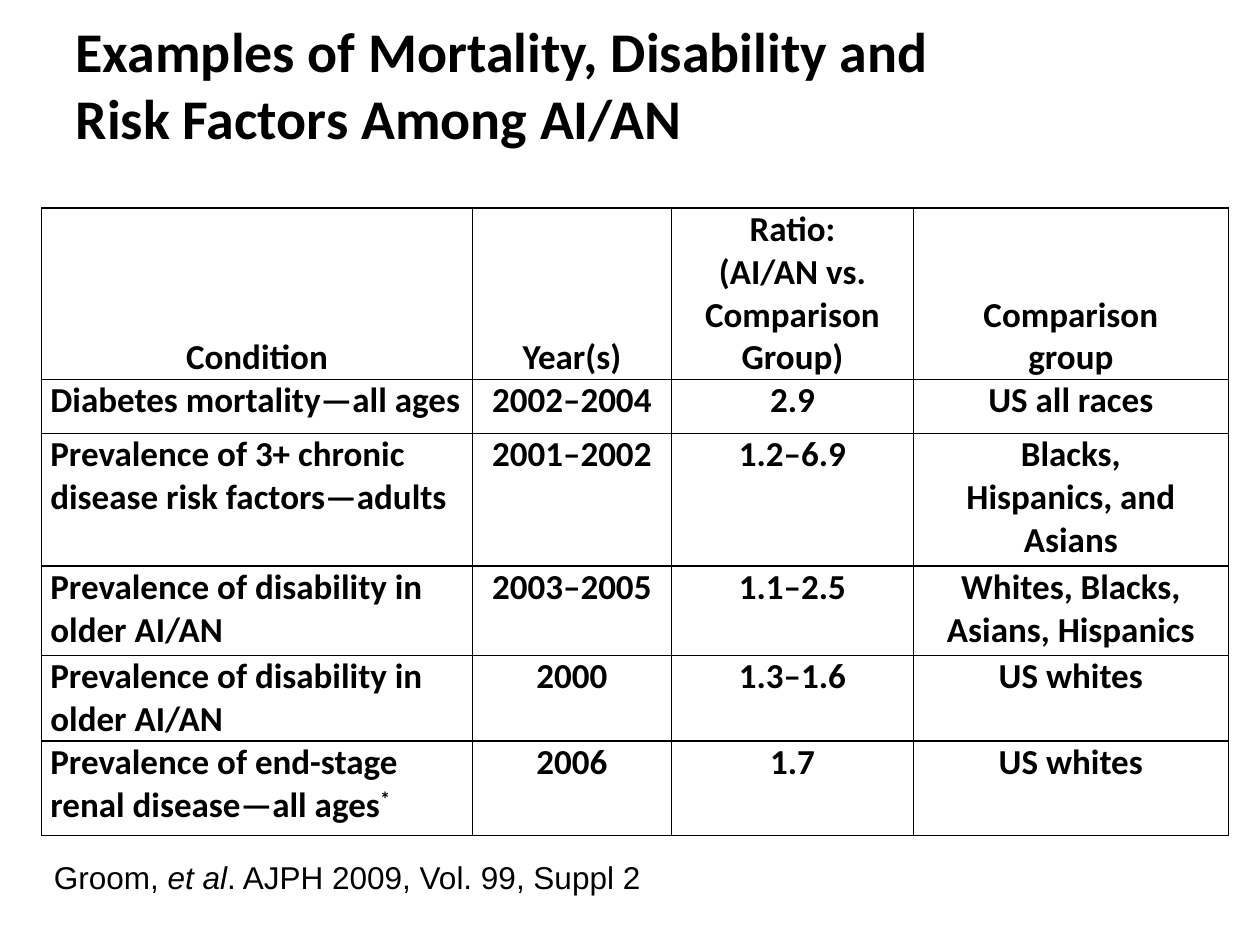
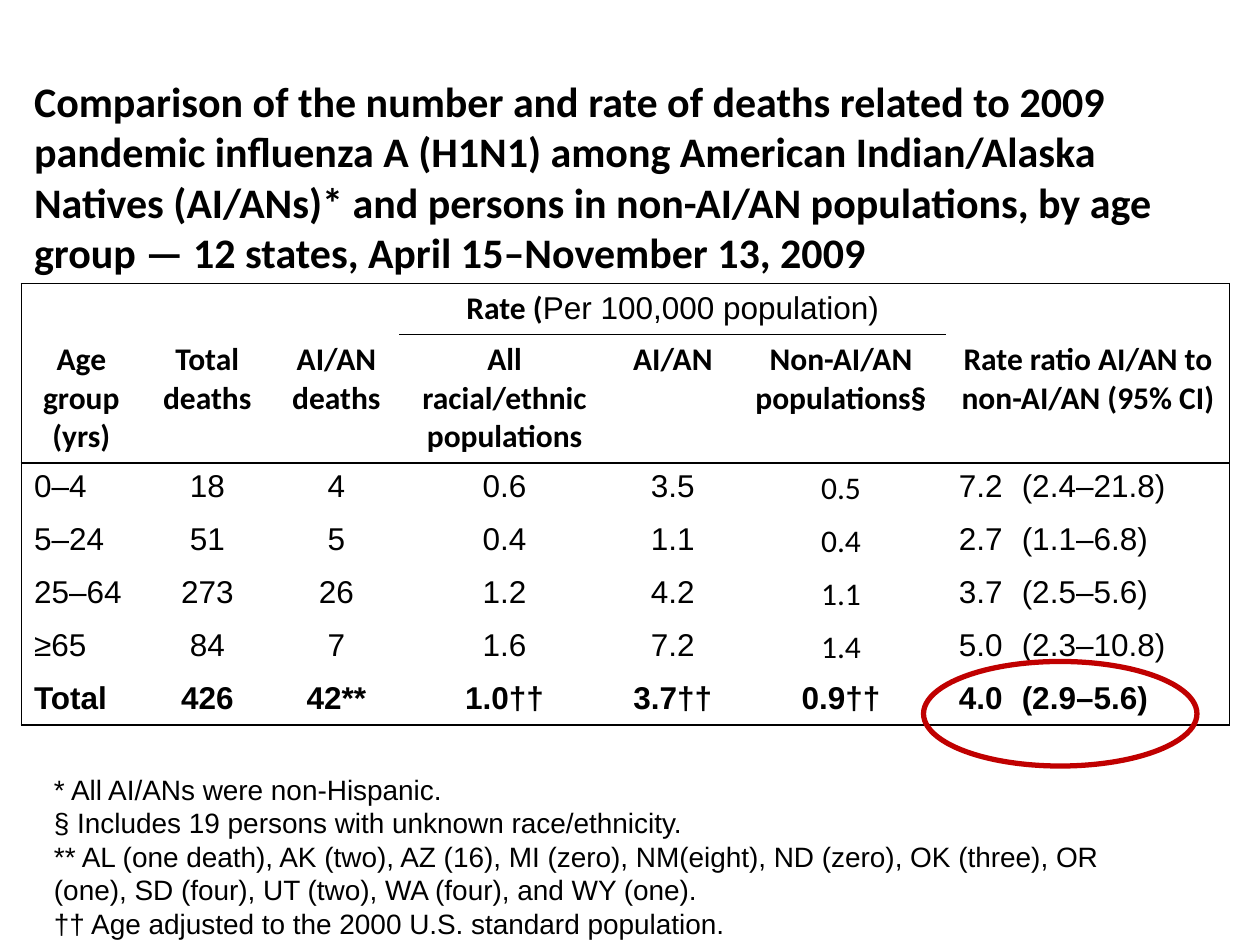
from lxml.etree import SubElement
from pptx import Presentation
from pptx.dml.color import RGBColor
from pptx.enum.shapes import MSO_SHAPE
from pptx.enum.text import MSO_ANCHOR, PP_ALIGN
from pptx.oxml.ns import qn
from pptx.util import Inches, Pt

COLORS = {"text": "000000", "line": "000000", "paper": "FFFFFF", "ring": "C00000"}
HEAD, BODY = "Calibri", "Arial"
LEFT, CENTER = PP_ALIGN.LEFT, PP_ALIGN.CENTER

# Content: a paragraph is a string or a list of (text, format) runs
MORTALITY_TITLE = "Examples of Mortality, Disability and Risk Factors Among AI/AN"
MORTALITY = [
    ("Condition", "Year(s)", ["Ratio:", "(AI/AN vs. Comparison Group)"],
     ["Comparison", "group"]),
    ("Diabetes mortality—all ages", "2002–2004", "2.9", "US all races"),
    ("Prevalence of 3+ chronic disease risk factors—adults", "2001–2002", "1.2–6.9",
     ["Blacks,", "Hispanics, and Asians"]),
    ("Prevalence of disability in older AI/AN", "2003–2005", "1.1–2.5",
     "Whites, Blacks, Asians, Hispanics"),
    ("Prevalence of disability in older AI/AN", "2000", "1.3–1.6", "US whites"),
    ([[("Prevalence of end-stage renal disease—all ages", {}), ("*", {"raised": True})]],
     "2006", "1.7", "US whites"),
]
CITATION = [[("Groom, ", {}), ("et al", {"italic": True}),
             (". AJPH 2009, Vol. 99, Suppl 2", {})]]

FLU_TITLE = (
    "Comparison of the number and rate of deaths related to 2009 pandemic influenza A "
    "(H1N1) among American Indian/Alaska Natives (AI/ANs)* and persons in non-AI/AN "
    "populations, by age group — 12 states, April 15–November 13, 2009")
RATE_HEADING = [[("Rate (", {"font": HEAD, "bold": True}),
                 ("Per 100,000 population)", {})]]
FLU = [
    ("", "", "", RATE_HEADING, "", "", ""),
    ("Age group (yrs)", "Total deaths", "AI/AN deaths", "All racial/ethnic populations",
     "AI/AN", "Non-AI/AN populations§", "Rate ratio AI/AN to non-AI/AN (95% CI)"),
    ("0–4", "18", "4", "0.6", "3.5", "0.5", "7.2\t(2.4–21.8)"),
    ("5–24", "51", "5", "0.4", "1.1", "0.4", "2.7\t(1.1–6.8)"),
    ("25–64", "273", "26", "1.2", "4.2", "1.1", "3.7\t(2.5–5.6)"),
    ("≥65", "84", "7", "1.6", "7.2", "1.4", "5.0\t(2.3–10.8)"),
    ("Total", "426", "42**", "1.0††", "3.7††", "0.9††", "4.0\t(2.9–5.6)"),
]
FOOTNOTES = [
    "* All AI/ANs were non-Hispanic.",
    "§ Includes 19 persons with unknown race/ethnicity.",
    "** AL (one death), AK (two), AZ (16), MI (zero), NM(eight), ND (zero), OK (three), "
    "OR (one), SD (four), UT (two), WA (four), and WY (one).",
    "†† Age adjusted to the 2000 U.S. standard population.",
]


def color(name):
    return RGBColor.from_string(COLORS[name])


def write(tf, text, size=18, font=BODY, bold=False, align=LEFT, tab=None):
    """Fill a text frame with a string or a list of paragraphs."""
    for i, para in enumerate([text] if isinstance(text, str) else text):
        p = tf.add_paragraph() if i else tf.paragraphs[0]
        p.alignment = align
        if tab:
            tabs = SubElement(p._p.get_or_add_pPr(), qn("a:tabLst"))
            SubElement(tabs, qn("a:tab"), pos=str(Inches(tab)), algn="l")
        for words, fmt in [(para, {})] if isinstance(para, str) else para:
            r = p.add_run()
            r.text = words
            r.font.size = Pt(size)
            r.font.name = fmt.get("font", font)
            r.font.bold = fmt.get("bold", bold)
            r.font.italic = fmt.get("italic", False)
            r.font.color.rgb = color("text")
            if fmt.get("raised"):
                r._r.get_or_add_rPr().set("baseline", "30000")


def add_titled_slide(prs, title, box, size):
    s = prs.slides.add_slide(prs.slide_layouts[5])
    sp = s.shapes.title
    sp.left, sp.top, sp.width, sp.height = map(Inches, box)
    sp.text_frame.word_wrap = True
    sp.text_frame.vertical_anchor = MSO_ANCHOR.BOTTOM
    write(sp.text_frame, title, size=size, font=HEAD, bold=True)
    return s


def add_note(s, text, box, size):
    tf = s.shapes.add_textbox(*map(Inches, box)).text_frame
    tf.word_wrap = True
    write(tf, text, size=size)


def add_grid(s, left, top, widths, heights):
    """Add an unstyled table with the given column widths and row heights."""
    box = map(Inches, (left, top, sum(widths), sum(heights)))
    table = s.shapes.add_table(len(heights), len(widths), *box).table
    table.first_row = table.horz_banding = False
    for column, width in zip(table.columns, widths):
        column.width = Inches(width)
    for row, height in zip(table.rows, heights):
        row.height = Inches(height)
    return table


def set_borders(cell, sides):
    """Draw the sides named in a string of L, R, T, B and clear the rest."""
    tcPr = cell._tc.get_or_add_tcPr()
    for side in "LRTB":
        ln = SubElement(tcPr, qn(f"a:ln{side}"), w=str(Pt(1)))
        if side in sides:
            fill = SubElement(ln, qn("a:solidFill"))
            SubElement(fill, qn("a:srgbClr"), val=COLORS["line"])
        else:
            SubElement(ln, qn("a:noFill"))
    cell.fill.solid()
    cell.fill.fore_color.rgb = color("paper")


def build_mortality(prs):
    s = add_titled_slide(prs, MORTALITY_TITLE, (0.5, 0.08, 7.42, 1.17), 32)
    table = add_grid(s, 0.33, 1.65, [3.42, 1.58, 1.92, 2.5],
                     [1.36, 0.43, 1.05, 0.71, 0.68, 0.75])
    for i, row in enumerate(MORTALITY):
        for j, text in enumerate(row):
            cell = table.cell(i, j)
            cell.margin_left = cell.margin_right = Inches(0.07 if i else 0.06)
            cell.margin_top = cell.margin_bottom = 0
            cell.vertical_anchor = MSO_ANCHOR.TOP if i else MSO_ANCHOR.BOTTOM
            set_borders(cell, "LRTB")
            write(cell.text_frame, text, size=20, font=HEAD, bold=True,
                  align=LEFT if i and not j else CENTER)
    add_note(s, CITATION, (0.33, 6.76, 5.14, 0.4), 18)


def build_flu(prs):
    s = add_titled_slide(prs, FLU_TITLE, (0.17, 1, 9.42, 1.25), 24)
    widths = [0.95, 1.05, 1, 1.67, 1, 1.67, 1.05, 1.2]
    heights = [0.4, 1.02] + [0.42] * 4 + [0.4]
    table = add_grid(s, 0.17, 2.25, widths, heights)
    last_row, last_col = len(heights) - 1, len(widths) - 1
    rate_cols = range(3, 6)

    # Frame, rule under the header, rule under the rate heading
    for i in range(last_row + 1):
        for j in range(last_col + 1):
            sides = "L" * (j == 0) + "R" * (j == last_col or (i > 0 and j == last_col - 1))
            if i in (0, 2) or (i == 1 and j in rate_cols):
                sides += "T"
            if i in (1, last_row) or (i == 0 and j in rate_cols):
                sides += "B"
            set_borders(table.cell(i, j), sides)
        if i:
            table.cell(i, last_col - 1).merge(table.cell(i, last_col))
    table.cell(0, rate_cols[0]).merge(table.cell(0, rate_cols[-1]))

    for i, row in enumerate(FLU):
        header, total = i == 1, i == last_row
        for j, text in enumerate(row):
            if not text:
                continue
            plain_calibri = j == 5 and 1 < i < last_row
            ratio = i > 1 and j == 6
            write(table.cell(i, j).text_frame, text,
                  font=HEAD if header or plain_calibri else BODY, bold=header or total,
                  align=LEFT if i > 1 and j in (0, 6) else CENTER,
                  tab=0.5 if ratio else None)

    add_note(s, FOOTNOTES, (0.33, 6.08, 9.08, 1.45), 16)

    # Ring around the total rate ratio
    ring = s.shapes.add_shape(MSO_SHAPE.OVAL, *map(Inches, (7.33, 5.25, 2.17, 0.83)))
    ring.shadow.inherit = False
    ring.fill.background()
    ring.line.color.rgb = color("ring")
    ring.line.width = Pt(3)


def main():
    prs = Presentation()
    prs.slide_width, prs.slide_height = Inches(10), Inches(7.5)
    build_mortality(prs)
    build_flu(prs)
    prs.save("out.pptx")


if __name__ == "__main__":
    main()
